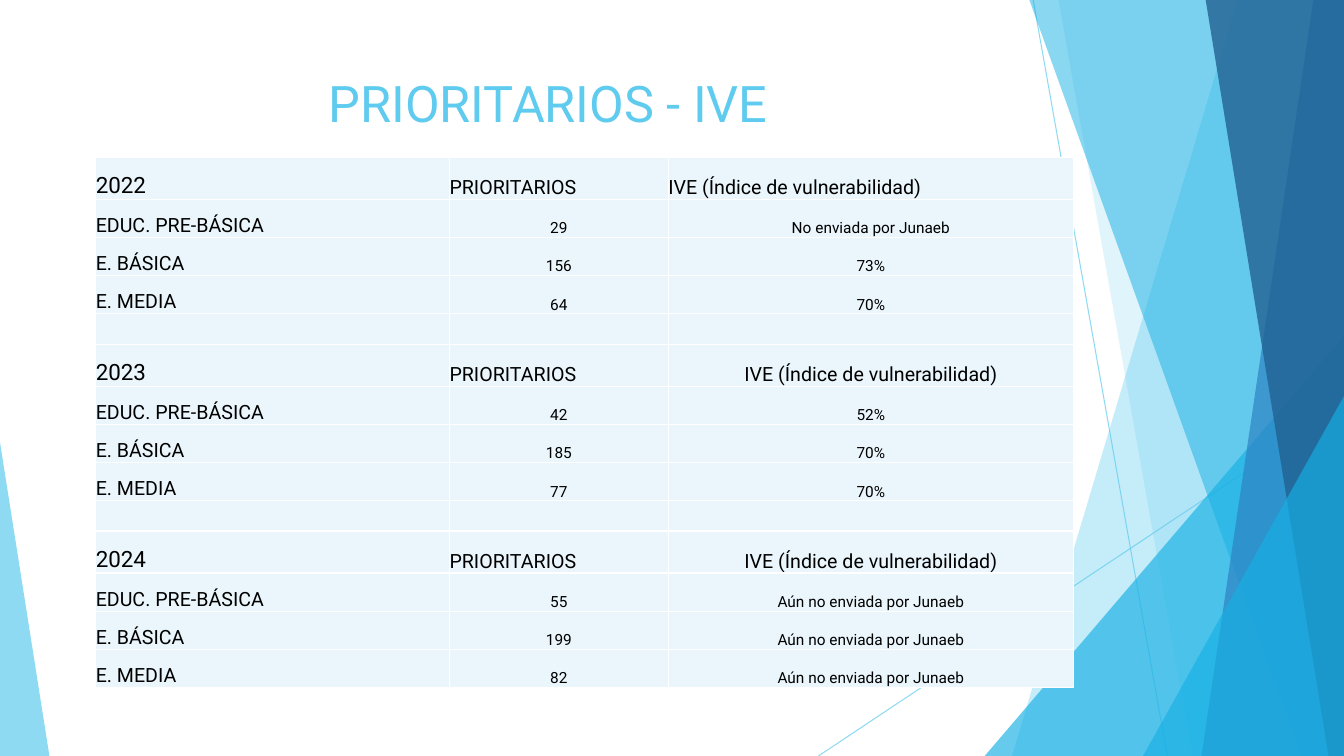
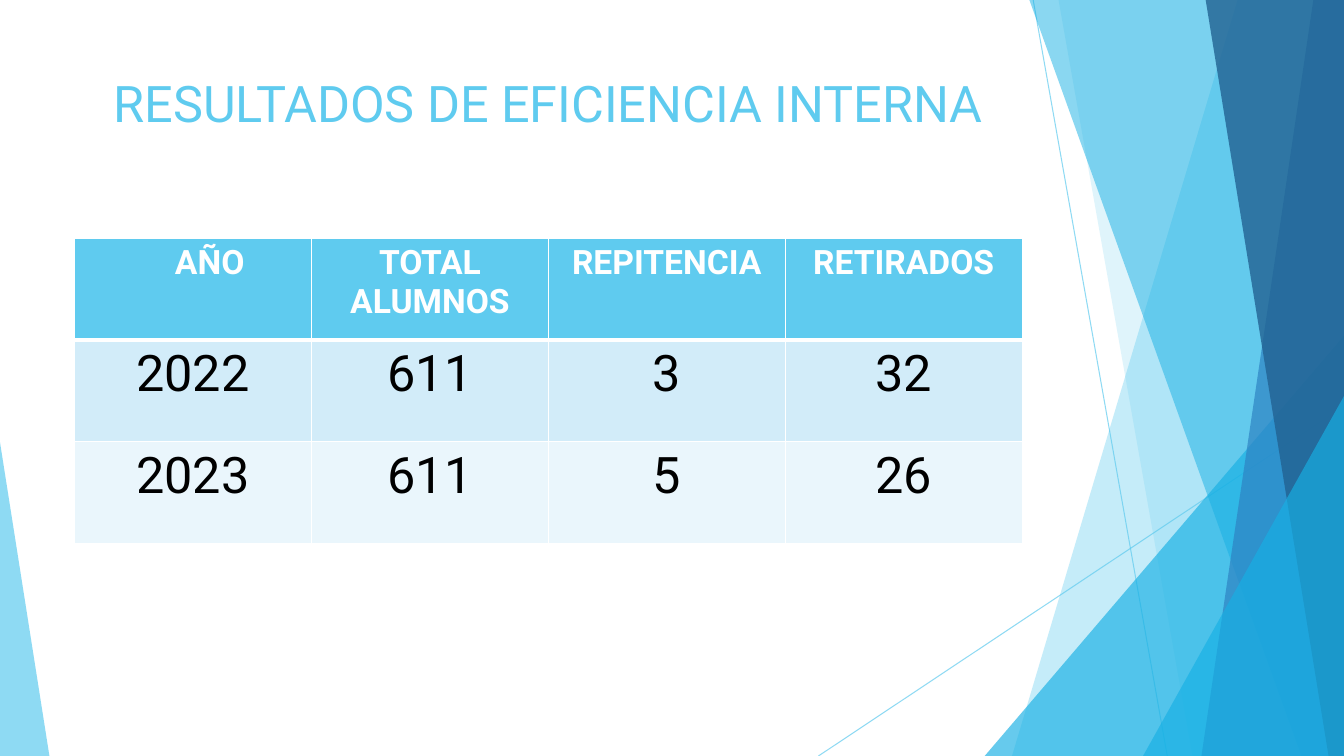
from lxml import etree
from pptx import Presentation
from pptx.dml.color import RGBColor
from pptx.enum.shapes import MSO_CONNECTOR, MSO_SHAPE
from pptx.enum.text import MSO_ANCHOR, PP_ALIGN
from pptx.oxml.ns import qn
from pptx.util import Pt

LEFT, MID = PP_ALIGN.LEFT, PP_ALIGN.CENTER
TOP, LOW = MSO_ANCHOR.TOP, MSO_ANCHOR.BOTTOM
TRI, LINE = MSO_SHAPE.ISOSCELES_TRIANGLE, MSO_CONNECTOR.STRAIGHT

SKY = RGBColor(0x5F, 0xCB, 0xEF)
CYAN = RGBColor(0x17, 0xB0, 0xE4)
BLUE = RGBColor(0x2E, 0x83, 0xC3)
NAVY = RGBColor(0x22, 0x62, 0x92)
PALE = RGBColor(0xEA, 0xF6, 0xFC)
SOFT = RGBColor(0xD2, 0xEC, 0xF9)
WHITE = RGBColor(0xFF, 0xFF, 0xFF)
BLACK = RGBColor(0, 0, 0)
FONT = "Roboto"
WIDE, HIGH = 960, 540

RAYS = [(738, 0, 833.8, HIGH), (WIDE, 290.2, 584.6, HIGH)]
BACK = [(884.2, 722.9, SKY, 36), (756, 851.8, SKY, 20)]
FRONT = [(735.1, 929.5, CYAN, 50), (938.2, 858.2, BLUE, 70), (861.1, 949, NAVY, 80)]

YEARS = [
    ("2022", LEFT, [("29", "No enviada por Junaeb"), ("156", "73%"), ("64", "70%")]),
    ("2023", MID, [("42", "52%"), ("185", "70%"), ("77", "70%")]),
    ("2024", MID, [(n, "Aún no enviada por Junaeb") for n in ("55", "199", "82")]),
]
LEVELS = ["EDUC. PRE-BÁSICA", "E. BÁSICA", "E. MEDIA"]
RESULTS = [
    ["AÑO", "TOTAL ALUMNOS", "REPITENCIA", "RETIRADOS"],
    ["2022", "611", "3", "32"],
    ["2023", "611", "5", "26"],
]


def fade(part, alpha):
    tint = part._element.spPr.find(".//" + qn("a:srgbClr"))
    etree.SubElement(tint, qn("a:alpha")).set("val", str(alpha * 1000))


def paint(shape, tint, alpha):
    shape.shadow.inherit = False
    shape.fill.solid()
    shape.fill.fore_color.rgb = tint
    shape.line.fill.background()
    fade(shape, alpha)


def band(slide, head, foot, tint, alpha):
    pen = slide.shapes.build_freeform(Pt(head), Pt(-0.6))
    pen.add_line_segments([(Pt(WIDE), Pt(-0.6)), (Pt(WIDE), Pt(HIGH)), (Pt(foot), Pt(HIGH))])
    paint(pen.convert_to_shape(), tint, alpha)


def wedge(slide, left, top, width, peak, tint, alpha):
    shape = slide.shapes.add_shape(TRI, Pt(left), Pt(top), Pt(width), Pt(HIGH - top))
    shape.adjustments[0] = peak
    paint(shape, tint, alpha)


def decor(slide):
    for ends in RAYS:
        ray = slide.shapes.add_connector(LINE, *map(Pt, ends))
        ray.line.color.rgb = SKY
        ray.line.width = Pt(0.75)
        fade(ray, 70)
        etree.SubElement(ray._element.spPr, qn("a:effectLst"))
    for item in BACK:
        band(slide, *item)
    wedge(slide, 703.4, 239.8, 256.6, 1, CYAN, 66)
    for item in FRONT:
        band(slide, *item)
    wedge(slide, 816.5, 283, 143.5, 1, CYAN, 66)
    wedge(slide, 0, 316, 35.3, 0, SKY, 70)


def style(par, size, tint, align, bold=False):
    par.alignment = align
    font = par.font
    font.name, font.size, font.bold = FONT, Pt(size), bold
    font.color.rgb = tint


def title(slide, text, box):
    frame = slide.shapes.add_textbox(*map(Pt, box)).text_frame
    frame.word_wrap = True
    frame.text = text
    style(frame.paragraphs[0], 36, SKY, MID)


def edge(cell, base):
    props = cell._tc.get_or_add_tcPr()
    for side, width in (("L", 1), ("R", 1), ("T", 1), ("B", base)):
        line = etree.SubElement(props, qn("a:ln" + side), w=str(Pt(width)))
        fill = etree.SubElement(line, qn("a:solidFill"))
        etree.SubElement(fill, qn("a:srgbClr"), val=str(WHITE))


def put(cell, text, size, align, fill, tint=BLACK, bold=False, anchor=TOP, base=1):
    edge(cell, base)
    cell.fill.solid()
    cell.fill.fore_color.rgb = fill
    cell.vertical_anchor = anchor
    cell.text = text
    style(cell.text_frame.paragraphs[0], size, tint, align, bold)


def grid(slide, left, top, cols, rows):
    box = map(Pt, (left, top, sum(cols), sum(rows)))
    table = slide.shapes.add_table(len(rows), len(cols), *box).table
    table.first_row = table.horz_banding = False
    for col, width in zip(table.columns, cols):
        col.width = Pt(width)
    for row, height in zip(table.rows, rows):
        row.height = Pt(height)
    return table


def index(slide, left, top):
    lines = []
    for year, align, values in YEARS:
        if lines:
            lines.append((21.6, [("", 11, LEFT)] * 3))
        lines.append((30, [(year, 16, LEFT), ("PRIORITARIOS", 14, LEFT),
                           ("IVE (Índice de vulnerabilidad)", 14, align)]))
        for level, (count, rate) in zip(LEVELS, values):
            lines.append((27.3, [(level, 14, LEFT), (count, 11, MID), (rate, 11, MID)]))
    table = grid(slide, left, top, [252.7, 156.3, 289.5], [high for high, _ in lines])
    for row, (_, cells) in zip(table.rows, lines):
        for cell, (text, size, align) in zip(row.cells, cells):
            cell.margin_left = cell.margin_right = cell.margin_top = cell.margin_bottom = 0
            put(cell, text, size, align, PALE, anchor=LOW)


def results(slide, left, top, width, height):
    table = grid(slide, left, top, [width / 4] * 4, [height / 3] * 3)
    looks = [(24, SKY, WHITE, True, 3), (36, SOFT, BLACK, False, 1), (36, PALE, BLACK, False, 1)]
    for row, texts, (size, fill, tint, bold, base) in zip(table.rows, RESULTS, looks):
        for cell, text in zip(row.cells, texts):
            put(cell, text, size, MID, fill, tint, bold, base=base)
    table.cell(0, 0).margin_left = Pt(31)


def main():
    deck = Presentation()
    deck.slide_width, deck.slide_height = Pt(WIDE), Pt(HIGH)
    pages = [
        ("PRIORITARIOS - IVE", index, (68.4, 112.3)),
        ("RESULTADOS DE EFICIENCIA INTERNA", results, (53.3, 170, 676.8, 218)),
    ]
    for head, body, box in pages:
        slide = deck.slides.add_slide(deck.slide_layouts[6])
        decor(slide)
        title(slide, head, (53.3, 48.2, 676.8, 103.7))
        body(slide, *box)
    deck.save("out.pptx")


if __name__ == "__main__":
    main()
